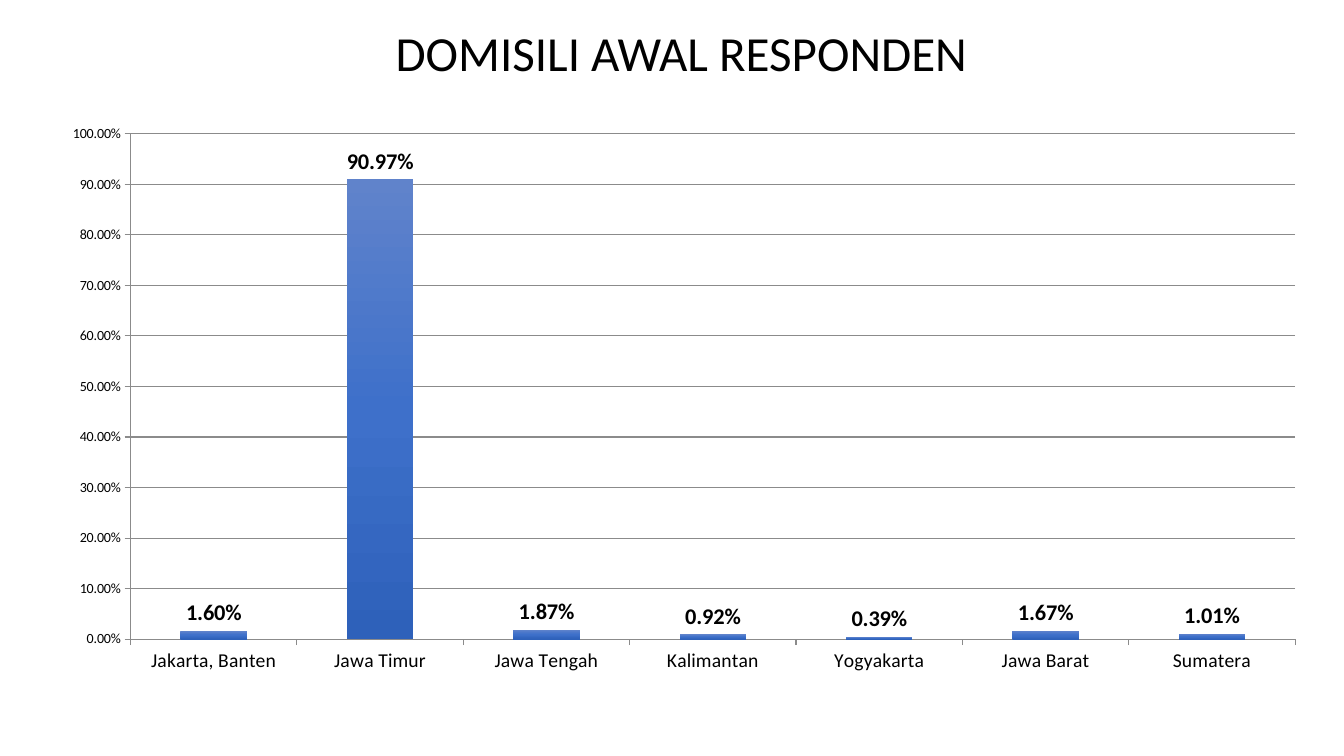
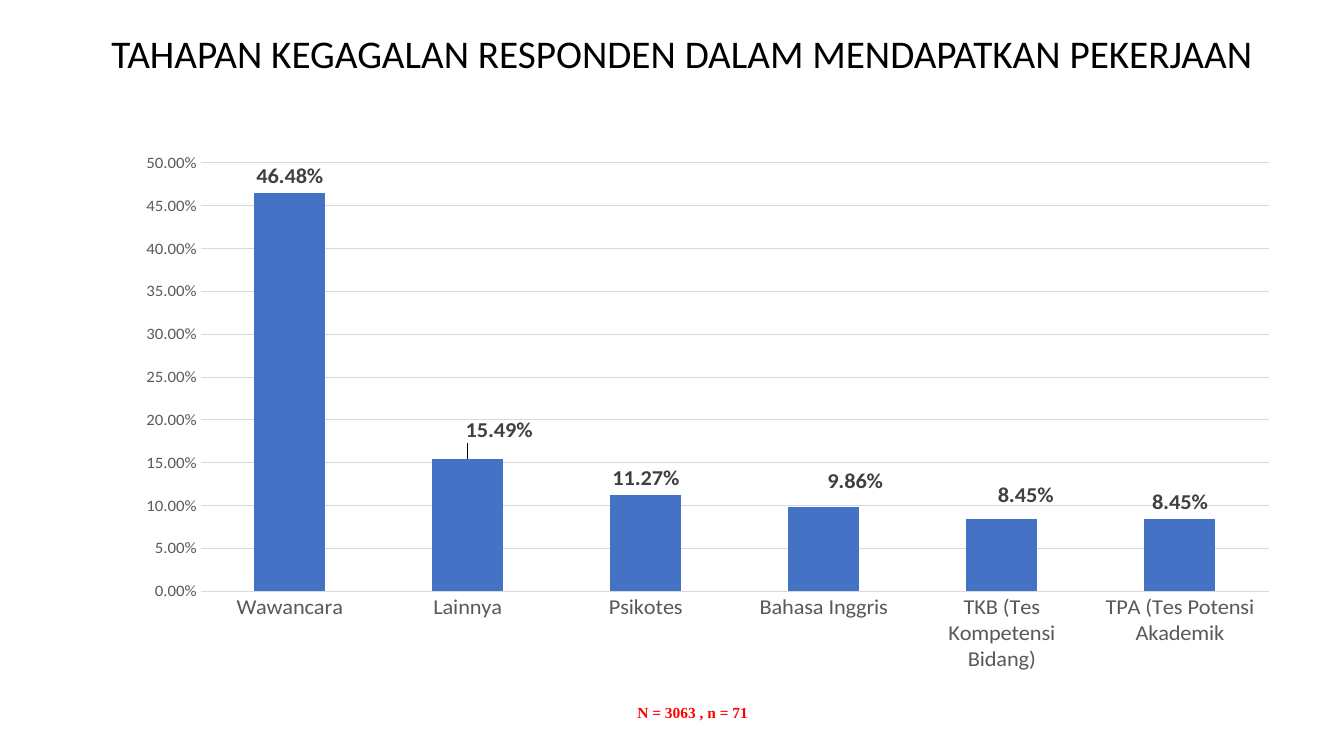
from copy import deepcopy

from pptx import Presentation
from pptx.chart.data import CategoryChartData
from pptx.dml.color import RGBColor
from pptx.enum.chart import XL_CHART_TYPE, XL_LABEL_POSITION, XL_TICK_MARK
from pptx.enum.text import MSO_ANCHOR, PP_ALIGN
from pptx.oxml import parse_xml
from pptx.oxml.ns import nsdecls, qn
from pptx.util import Inches, Pt

COLUMN = XL_CHART_TYPE.COLUMN_CLUSTERED
ABOVE_BAR = XL_LABEL_POSITION.OUTSIDE_END
TICK_OUT, TICK_NONE = XL_TICK_MARK.OUTSIDE, XL_TICK_MARK.NONE
MIDDLE, CENTER = MSO_ANCHOR.MIDDLE, PP_ALIGN.CENTER
TITLE_ONLY = 5
PERCENT = "0.00%"

# Content
SLIDES = [
    {
        "title": "DOMISILI AWAL RESPONDEN",
        "style": "classic",
        "values": {
            "Jakarta, Banten": 0.016,
            "Jawa Timur": 0.9097,
            "Jawa Tengah": 0.0187,
            "Kalimantan": 0.0092,
            "Yogyakarta": 0.0039,
            "Jawa Barat": 0.0167,
            "Sumatera": 0.0101,
        },
        "scale": (1, 0.1),
        "top": 1.19,
        "height": 5.51,
        "plot": (0.06, 0.025, 0.93, 0.91),
        "label_shifts": {},
    },
    {
        "title": "TAHAPAN KEGAGALAN RESPONDEN DALAM MENDAPATKAN PEKERJAAN",
        "style": "modern",
        "values": {
            "Wawancara": 0.4648,
            "Lainnya": 0.1549,
            "Psikotes": 0.1127,
            "Bahasa Inggris": 0.0986,
            "TKB (Tes Kompetensi Bidang)": 0.0845,
            "TPA (Tes Potensi Akademik": 0.0845,
        },
        "scale": (0.5, 0.05),
        "top": 1.35,
        "height": 5.32,
        "plot": (0.116, 0.053, 0.853, 0.847),
        # Bar index: label offset as a share of the chart's width and height
        "label_shifts": {1: (0.025, -0.022), 3: (0.025, -0.017), 4: (0.019, -0.013)},
        "sample": "N = 3063 , n = 71",
    },
]

# Shared look
THEME = {
    "font": "Calibri",
    "sample_font": "Times New Roman",
    "black": "000000",
    "bar": "4472C4",
    "sample": "FF0000",
    "sample_size": 11,
    "label_size": 16,
    "left": 0.55,
    "width": 12.42,
    "classic": {
        "title_size": 35, "category_size": 14, "value_size": 10,
        "axis_text": "000000", "label_text": "000000",
        "grid": "8B8B8B", "axis_line": "8B8B8B", "tick": TICK_OUT,
        "gradient": [(0, "6083CB"), (0.5, "3E70CA"), (1, "2E61BA")],
    },
    "modern": {
        "title_size": 28, "category_size": 16, "value_size": 12,
        "axis_text": "595959", "label_text": "404040",
        "grid": "D9D9D9", "axis_line": None, "tick": TICK_NONE,
        "gradient": None,
    },
}


def set_attributes(target, **values):
    for name, value in values.items():
        setattr(target, name, value)


def set_font(font, size, color, name=THEME["font"], bold=False):
    set_attributes(font, name=name, size=Pt(size), bold=bold)
    font.color.rgb = RGBColor.from_string(color)


def manual_layout(inner=False, **values):
    parts = {"layoutTarget": "inner", "xMode": "edge", "yMode": "edge"} if inner else {}
    parts.update(values)
    body = "".join(f'<c:{name} val="{value}"/>' for name, value in parts.items())
    return parse_xml(f'<c:layout {nsdecls("c")}><c:manualLayout>{body}'
                     "</c:manualLayout></c:layout>")


def set_title(slide, text, size):
    title = slide.shapes.title
    set_attributes(title, left=Inches(THEME["left"]), top=Inches(0.1),
                   width=Inches(THEME["width"]), height=Inches(0.9))
    title.text_frame.text = text
    set_attributes(title.text_frame, vertical_anchor=MIDDLE, word_wrap=True)
    paragraph = title.text_frame.paragraphs[0]
    set_attributes(paragraph, alignment=CENTER, line_spacing=0.9)
    set_font(paragraph.runs[0].font, size, THEME["black"])


def format_axes(chart, style, scale):
    sizes = ((chart.category_axis, "category_size"), (chart.value_axis, "value_size"))
    for axis, size in sizes:
        set_attributes(axis, major_tick_mark=style["tick"], minor_tick_mark=TICK_NONE)
        set_font(axis.tick_labels.font, style[size], style["axis_text"])
        line = axis.format.line
        if style["axis_line"]:
            line.color.rgb = RGBColor.from_string(style["axis_line"])
            line.width = Pt(0.75)
        else:
            line.fill.background()
    maximum, step = scale
    set_attributes(chart.value_axis, minimum_scale=0, maximum_scale=maximum,
                   major_unit=step, has_major_gridlines=True)
    set_attributes(chart.value_axis.tick_labels, number_format=PERCENT,
                   number_format_is_linked=False)
    grid = chart.value_axis.major_gridlines.format.line
    grid.color.rgb = RGBColor.from_string(style["grid"])
    grid.width = Pt(0.75)


def fill_bars(series, gradient):
    fill = series.format.fill
    if not gradient:
        fill.solid()
        fill.fore_color.rgb = RGBColor.from_string(THEME["bar"])
        return
    fill.gradient()
    fill.gradient_angle = 270
    stop_list = series._element.find(".//" + qn("a:gsLst"))
    stop_list.append(deepcopy(stop_list[0]))
    for stop, (position, color) in zip(fill.gradient_stops, gradient):
        stop.position = position
        stop.color.rgb = RGBColor.from_string(color)


def label_bars(series, color, shifts):
    labels = series.data_labels
    set_attributes(labels, show_value=True, number_format=PERCENT,
                   number_format_is_linked=False, position=ABOVE_BAR)
    set_font(labels.font, THEME["label_size"], color, bold=True)
    for index, (x, y) in shifts.items():
        label = series.points[index].data_label
        label.position = ABOVE_BAR
        set_font(label.font, THEME["label_size"], color, bold=True)
        element = next(item for item in series._element.iter(qn("c:dLbl"))
                       if item.find(qn("c:idx")).get("val") == str(index))
        element.insert(1, manual_layout(x=x, y=y))
        element.insert(2, parse_xml(f'<c:numFmt {nsdecls("c")} formatCode="{PERCENT}" '
                                    'sourceLinked="0"/>'))


def add_column_chart(slide, content, style):
    data = CategoryChartData(number_format=PERCENT)
    data.categories = list(content["values"])
    data.add_series("Series 1", list(content["values"].values()))
    box = (THEME["left"], content["top"], THEME["width"], content["height"])
    chart = slide.shapes.add_chart(COLUMN, *map(Inches, box), data).chart
    set_attributes(chart, has_legend=False, has_title=False)
    set_font(chart.font, 10, THEME["black"])
    set_attributes(chart.plots[0], gap_width=150, vary_by_categories=False)

    # Fixed inner plot area
    plot_area = chart._chartSpace.find(".//" + qn("c:plotArea"))
    for old_layout in plot_area.findall(qn("c:layout")):
        plot_area.remove(old_layout)
    plot_area.insert(0, manual_layout(inner=True, **dict(zip("xywh", content["plot"]))))

    format_axes(chart, style, content["scale"])
    series = chart.plots[0].series[0]
    fill_bars(series, style["gradient"])
    label_bars(series, style["label_text"], content["label_shifts"])


def add_sample_table(slide, text):
    box = map(Inches, (6.07, 6.94, 1.6, 0.33))
    table = slide.shapes.add_table(1, 1, *box).table
    set_attributes(table, first_row=False, horz_banding=False)
    cell = table.cell(0, 0)
    cell.fill.background()
    cell.text = text
    paragraph = cell.text_frame.paragraphs[0]
    paragraph.alignment = CENTER
    set_font(paragraph.runs[0].font, THEME["sample_size"], THEME["sample"],
             THEME["sample_font"], bold=True)


def main():
    presentation = Presentation()
    set_attributes(presentation, slide_width=Inches(13.33), slide_height=Inches(7.5))
    for content in SLIDES:
        style = THEME[content["style"]]
        slide = presentation.slides.add_slide(presentation.slide_layouts[TITLE_ONLY])
        set_title(slide, content["title"], style["title_size"])
        add_column_chart(slide, content, style)
        if "sample" in content:
            add_sample_table(slide, content["sample"])
    presentation.save("out.pptx")


if __name__ == "__main__":
    main()
